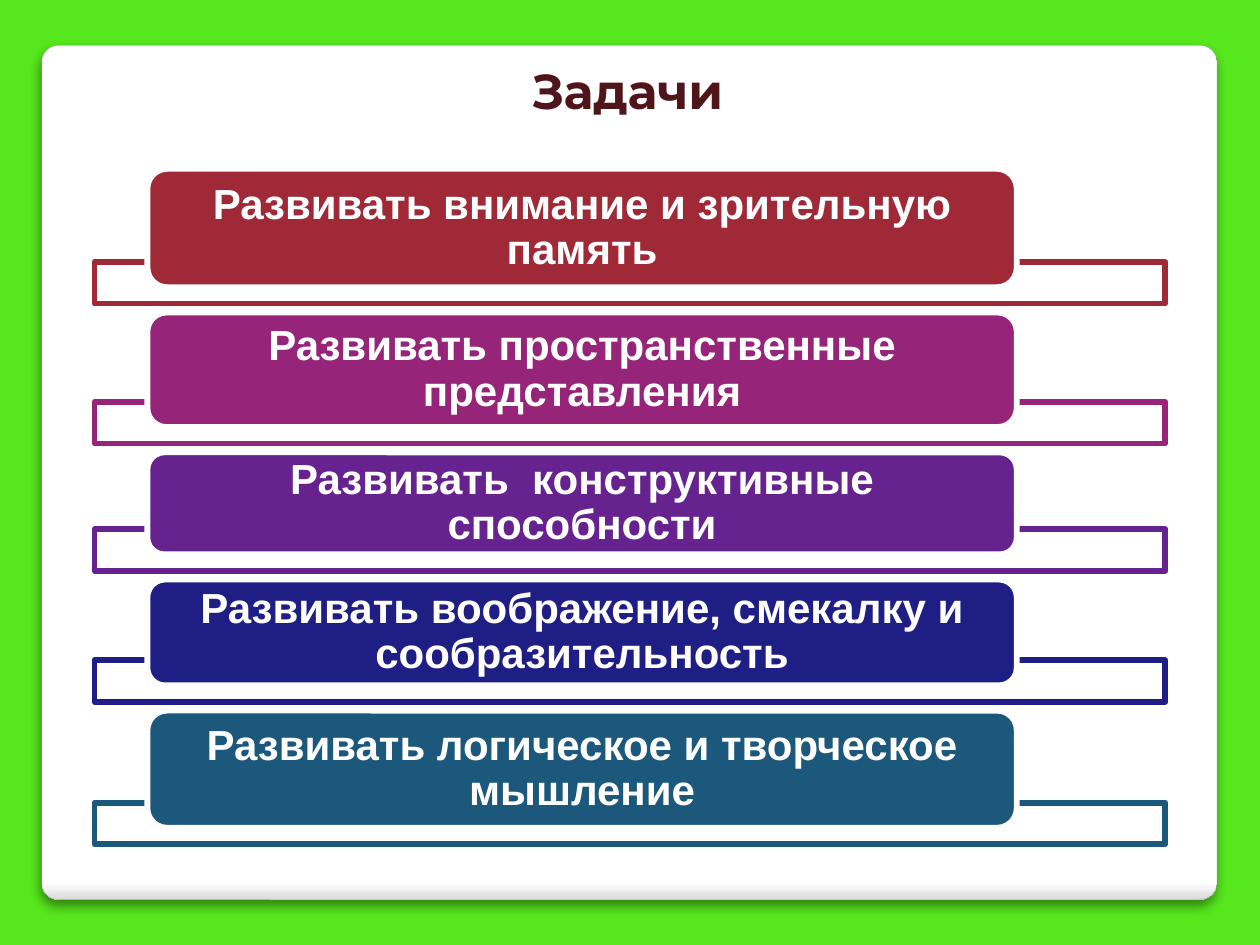
from lxml import etree
from pptx import Presentation
from pptx.dml.color import RGBColor
from pptx.enum.shapes import MSO_SHAPE
from pptx.enum.text import MSO_ANCHOR, MSO_AUTO_SIZE, PP_ALIGN
from pptx.oxml.ns import qn
from pptx.util import Inches, Pt

RECTANGLE, ROUNDED = MSO_SHAPE.RECTANGLE, MSO_SHAPE.ROUNDED_RECTANGLE
CENTER, MIDDLE = PP_ALIGN.CENTER, MSO_ANCHOR.MIDDLE
TITLE_ONLY = 5

COLORS = {
    "background": "57E71D", "white": "FFFFFF", "card_edge": "DADADA",
    "card_line": "A4A4A4", "shadow": "000000", "title": "50141B",
    "red": "9F2936", "magenta": "962579", "purple": "66228E",
    "navy": "1E1E85", "teal": "1B587C",
}

# Text, colour and banner height in rows
TASKS = [
    ("Развивать внимание и зрительную память", "red", 9.4),
    ("Развивать пространственные представления", "magenta", 9.1),
    ("Развивать  конструктивные способности", "purple", 8.1),
    ("Развивать воображение, смекалку и сообразительность", "navy", 8.4),
    ("Развивать логическое и творческое мышление", "teal", 9.3),
]
FIRST_ROW, BANNER_GAP = 13.4, 2
FRAME_HEIGHT, FRAME_OVERLAP = 3.3, 2


def color(name):
    return RGBColor.from_string(COLORS[name])


def write(shape, text, font="Arial", size=24, ink="white", spacing=1.0,
          margins=(0.1, 0.05, 0.1, 0.05)):
    """Put one bold, centred paragraph into a shape."""
    frame = shape.text_frame
    frame.word_wrap = True
    frame.auto_size = MSO_AUTO_SIZE.NONE
    frame.vertical_anchor = MIDDLE
    (frame.margin_left, frame.margin_top,
     frame.margin_right, frame.margin_bottom) = map(Inches, margins)
    paragraph = frame.paragraphs[0]
    paragraph.alignment = CENTER
    paragraph.line_spacing = spacing
    run = paragraph.add_run()
    run.text = text
    run.font.name, run.font.size, run.font.bold = font, Pt(size), True
    run.font.color.rgb = color(ink)


class SlideBuilder:
    """Holds the slide and a grid of 100 columns by 75 rows."""

    def __init__(self, presentation):
        self.column = presentation.slide_width / 100
        self.row = presentation.slide_height / 75
        self.slide = presentation.slides.add_slide(
            presentation.slide_layouts[TITLE_ONLY])
        background = self.slide.background.fill
        background.solid()
        background.fore_color.rgb = color("background")

    def place(self, left, top, width, height):
        return (round(left * self.column), round(top * self.row),
                round(width * self.column), round(height * self.row))

    def box(self, kind, area, fill, line, line_width=3.35):
        shape = self.slide.shapes.add_shape(kind, *self.place(*area))
        shape.shadow.inherit = False
        shape.fill.solid()
        shape.fill.fore_color.rgb = color(fill)
        shape.line.color.rgb = color(line)
        shape.line.width = Pt(line_width)
        return shape

    def card(self, *area):
        shape = self.box(ROUNDED, area, "white", "card_line", 0.16)
        shape.adjustments[0] = 0.02
        # Grey only along the bottom edge
        shape.fill.gradient()
        shape.fill.gradient_angle = 270
        stops = zip(shape.fill.gradient_stops, (0.98, 1), ("white", "card_edge"))
        for stop, position, name in stops:
            stop.position = position
            stop.color.rgb = color(name)
        # Soft shadow below
        effects = shape._element.spPr.find(qn("a:effectLst"))
        shadow = etree.SubElement(
            effects, qn("a:outerShdw"), blurRad=str(Pt(6)), dist=str(Pt(4)),
            dir="5400000", algn="t", rotWithShape="0")
        tint = etree.SubElement(shadow, qn("a:srgbClr"), val=COLORS["shadow"])
        etree.SubElement(tint, qn("a:alpha"), val="44000")
        # Behind the title placeholder
        self.slide.shapes._spTree.insert(2, shape._element)

    def title(self, text, *area):
        title = self.slide.shapes.title
        title.left, title.top, title.width, title.height = self.place(*area)
        write(title, text, font="Montserrat", size=28, ink="title",
              margins=(0.1, 0.11, 0.1, 0.05))

    def task(self, text, name, top, height):
        frame_top = top + height - FRAME_OVERLAP
        self.box(RECTANGLE, (7.5, frame_top, 85, FRAME_HEIGHT), "white", name)
        banner = self.box(ROUNDED, (11.7, top, 69, height), name, "white")
        write(banner, text, spacing=0.9, margins=(0.28, 0, 0.28, 0))


def main():
    presentation = Presentation()
    presentation.slide_width, presentation.slide_height = Inches(10), Inches(7.5)
    builder = SlideBuilder(presentation)

    # White card and heading
    builder.card(3.3, 3.6, 93.3, 67.8)
    builder.title("Задачи", 23.4, 3.6, 52.8, 6.4)

    # Stack of tasks
    top = FIRST_ROW
    for text, name, height in TASKS:
        builder.task(text, name, top, height)
        top += height + BANNER_GAP

    presentation.save("out.pptx")


if __name__ == "__main__":
    main()
